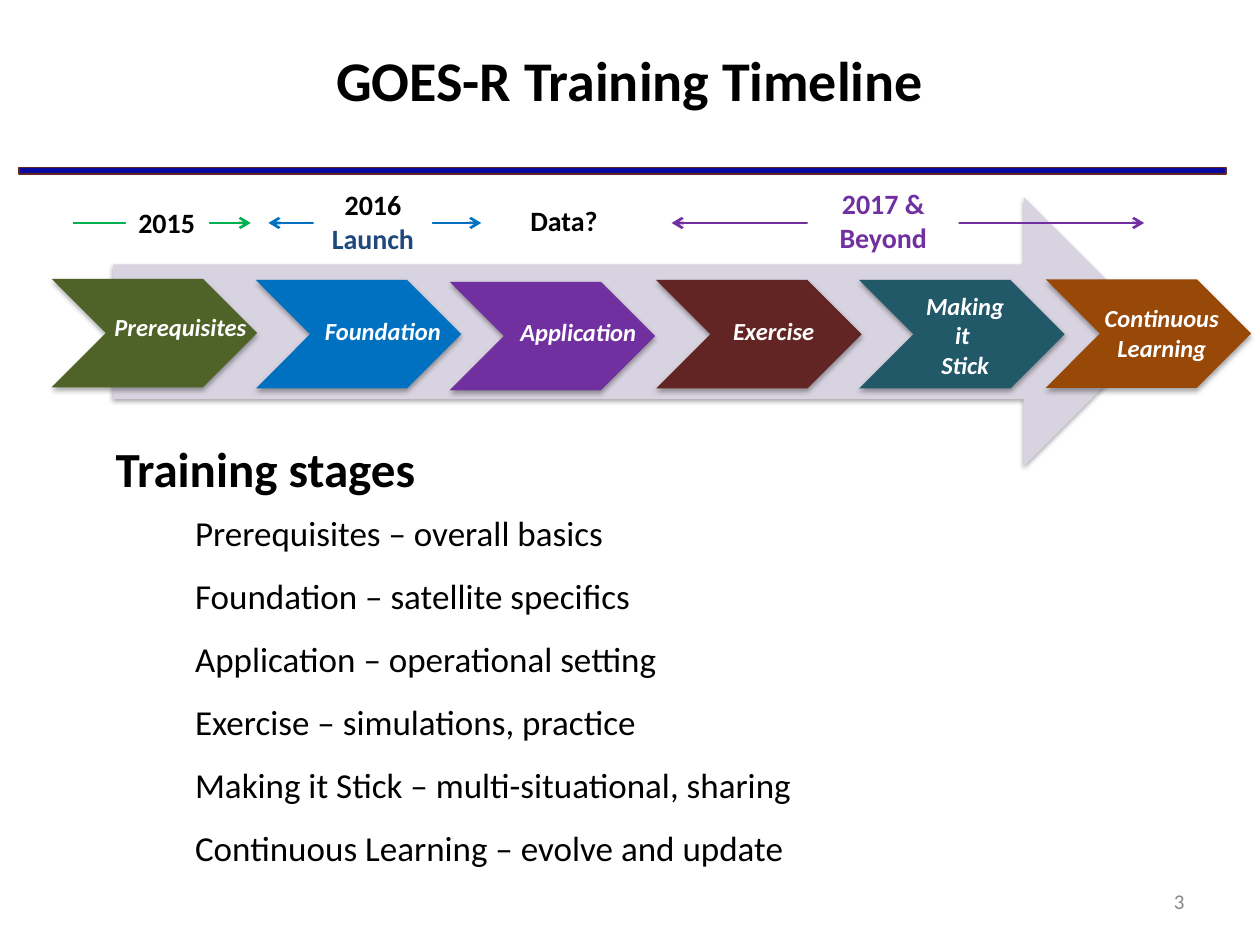
from pptx import Presentation
from pptx.dml.color import RGBColor
from pptx.enum.shapes import MSO_CONNECTOR, MSO_SHAPE
from pptx.enum.text import MSO_ANCHOR, MSO_AUTO_SIZE, PP_ALIGN
from pptx.oxml.ns import qn
from pptx.util import Pt
from lxml.etree import SubElement

LEFT, CENTER, RIGHT = PP_ALIGN.LEFT, PP_ALIGN.CENTER, PP_ALIGN.RIGHT


def rgb(color):
    return RGBColor.from_string(color)


class Deck:
    font = "Calibri"
    black, white = "000000", "FFFFFF"

    def __init__(self, prs):
        self.s = prs.slides.add_slide(prs.slide_layouts[6])

    def shape(self, kind, x, y, w, h, fill, line=None, shadow=False):
        sp = self.s.shapes.add_shape(kind, Pt(x), Pt(y), Pt(w), Pt(h))
        sp.fill.solid()
        sp.fill.fore_color.rgb = rgb(fill)
        if line:
            sp.line.color.rgb = rgb(line)
            sp.line.width = Pt(0.75)
        else:
            sp.line.fill.background()
        sp.shadow.inherit = False
        if shadow:
            effects = sp._element.spPr.find(qn("a:effectLst"))
            outer = SubElement(effects, qn("a:outerShdw"), blurRad=str(Pt(3.1)),
                               dist=str(Pt(1.8)), dir="5400000", rotWithShape="0")
            clr = SubElement(outer, qn("a:srgbClr"), val=self.black)
            SubElement(clr, qn("a:alpha"), val="35000")
        return sp

    def text(self, x, y, w, h, lines, size, align=LEFT, color=black, bold=False,
             italic=False, fill=None, wrap=True, grow=True, gap=0):
        """Each line is a string or a (string, colour) pair."""
        if fill:
            sp = self.shape(MSO_SHAPE.RECTANGLE, x, y, w, h, fill)
        else:
            sp = self.s.shapes.add_textbox(Pt(x), Pt(y), Pt(w), Pt(h))
        tf = sp.text_frame
        tf.word_wrap = wrap
        tf.auto_size = MSO_AUTO_SIZE.SHAPE_TO_FIT_TEXT if grow else MSO_AUTO_SIZE.NONE
        tf.vertical_anchor = MSO_ANCHOR.TOP if grow else MSO_ANCHOR.MIDDLE
        for i, line in enumerate(lines):
            words, tint = (line, color) if isinstance(line, str) else line
            p = tf.add_paragraph() if i else tf.paragraphs[0]
            p.alignment = align
            if i and gap:
                p.space_before = Pt(gap)
            r = p.add_run()
            r.text = words
            r.font.name, r.font.size = self.font, Pt(size)
            r.font.bold, r.font.italic = bold, italic
            r.font.color.rgb = rgb(tint)

    def arrow(self, x1, x2, y, color, ends):
        c = self.s.shapes.add_connector(MSO_CONNECTOR.STRAIGHT, Pt(x1), Pt(y), Pt(x2), Pt(y))
        c.line.color.rgb = rgb(color)
        c.line.width = Pt(1.5)
        ln = c.line._get_or_add_ln()
        for end in ends:
            SubElement(ln, qn(f"a:{end}"), type="arrow")
        SubElement(c._element.spPr, qn("a:effectLst"))


def main():
    prs = Presentation()
    prs.slide_width, prs.slide_height = Pt(720), Pt(540)
    d = Deck(prs)

    # Title, rule and page number
    d.shape(MSO_SHAPE.RECTANGLE, 10.8, 95.8, 689.8, 3.6, "0A0A9E", line="632423")
    d.text(516, 500.5, 168, 28.8, ["3"], 12, RIGHT, "888888", grow=False)
    d.text(54, 0, 612, 90, ["GOES-R Training Timeline"], 32, CENTER, bold=True, grow=False)

    # Stage chevrons on the big arrow
    d.shape(MSO_SHAPE.RIGHT_ARROW, 64.5, 112.5, 597.5, 154, "D8D3E0", shadow=True)
    for x, y, color in [
        (29.5, 159.3, "4F6228"), (146.2, 160, "0070C0"), (257, 161, "7030A0"),
        (375, 160, "632523"), (491, 160, "215968"), (597.6, 159.6, "984807"),
    ]:
        d.shape(MSO_SHAPE.CHEVRON, x, y, 117.4, 62, color, shadow=True)

    # Dates: each white label interrupts its arrow
    axis = 127.4
    green, purple, blue = "00B050", "7030A0", "0070C0"
    date = dict(size=16, bold=True)
    d.arrow(41.8, 143.3, axis, green, ["tailEnd"])
    d.text(72, 113.8, 47.5, 26.6, ["2015"], fill=d.white, wrap=False, **date)
    d.arrow(383.8, 653.8, axis, purple, ["headEnd", "tailEnd"])
    d.text(461.5, 103, 86.4, 46, ["2017 & Beyond"], align=CENTER, color=purple,
           fill=d.white, **date)
    d.arrow(153.4, 275, axis, blue, ["headEnd", "tailEnd"])
    d.text(179.3, 103.7, 67.7, 46, ["2016", ("Launch", "1F497D")], align=CENTER,
           fill=d.white, **date)
    d.text(296, 113, 63.4, 26.6, ["Data?"], **date)

    # Stage names
    for x, y, w, h, lines, align, wrap in [
        (58.3, 175, 92.2, 24.5, ["Prerequisites"], LEFT, True),
        (178.6, 177.1, 92.2, 24.5, ["Foundation"], LEFT, True),
        (290.2, 177.8, 82, 24.5, ["Application"], LEFT, False),
        (411.8, 177.1, 68.4, 24.5, ["Exercise"], LEFT, True),
        (517.7, 162.7, 67.7, 58.3, ["Making it ", "Stick"], CENTER, True),
        (621.4, 169.9, 85, 41, ["Continuous Learning"], CENTER, True),
    ]:
        d.text(x, y, w, h, lines, 14, align, d.white, bold=True, italic=True, wrap=wrap)

    # Stage descriptions
    d.text(59, 247, 211.7, 41, ["Training stages"], 28, bold=True)
    d.text(104.4, 288.7, 360, 213, [
        "Prerequisites – overall basics",
        "Foundation – satellite specifics",
        "Application – operational setting",
        "Exercise – simulations, practice",
        "Making it Stick – multi-situational, sharing",
        "Continuous Learning – evolve and update",
    ], 20, gap=12)

    prs.save("out.pptx")


if __name__ == "__main__":
    main()
